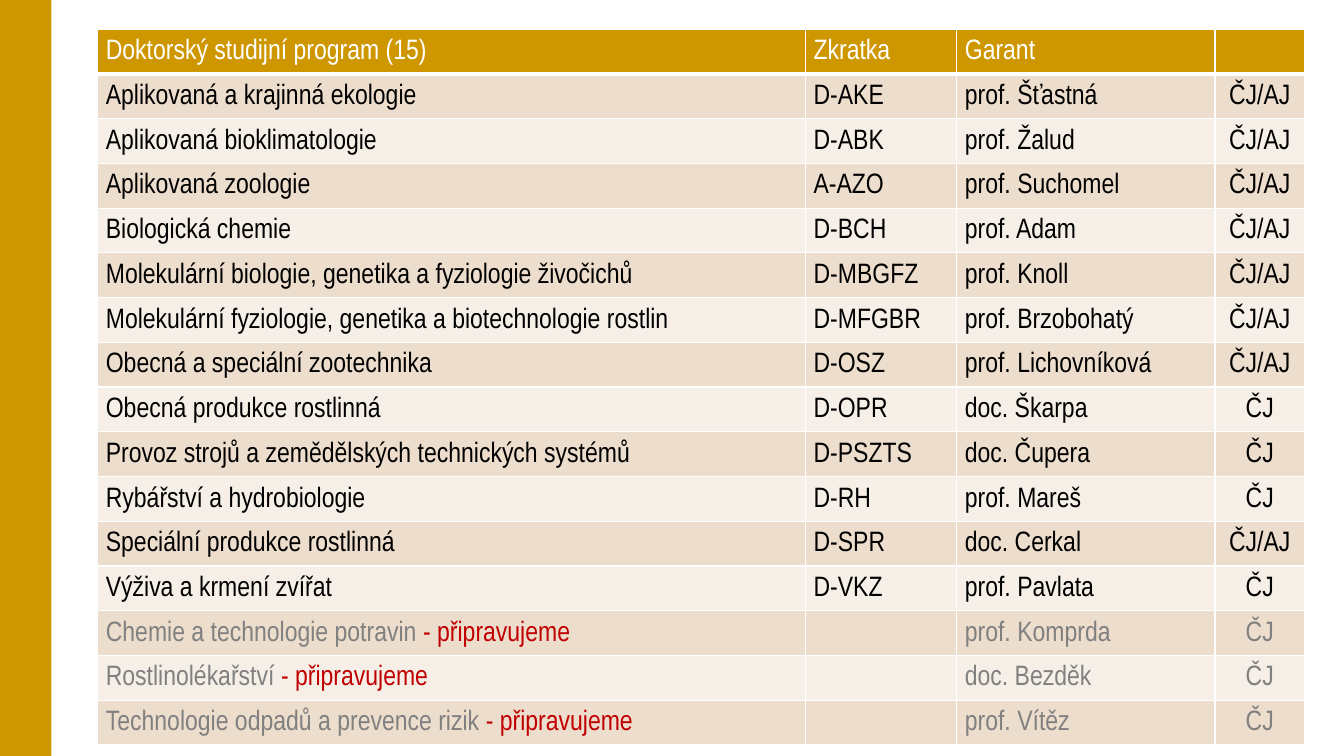
"""Build the slide listing the doctoral study programmes."""
from lxml.etree import SubElement as Sub
from pptx import Presentation
from pptx.dml.color import RGBColor as RGB
from pptx.enum.shapes import MSO_SHAPE as SHAPE
from pptx.enum.text import MSO_ANCHOR as ANCHOR, PP_ALIGN as ALIGN
from pptx.oxml.ns import qn
from pptx.util import Inches, Pt

HEADER = ("Doktorský studijní program (15)", "Zkratka", "Garant", "")
PROGRAMS = [
    ("Aplikovaná a krajinná ekologie", "D-AKE", "prof. Šťastná", "ČJ/AJ"),
    ("Aplikovaná bioklimatologie", "D-ABK", "prof. Žalud", "ČJ/AJ"),
    ("Aplikovaná zoologie", "A-AZO", "prof. Suchomel", "ČJ/AJ"),
    ("Biologická chemie", "D-BCH", "prof. Adam", "ČJ/AJ"),
    ("Molekulární biologie, genetika a fyziologie živočichů", "D-MBGFZ", "prof. Knoll", "ČJ/AJ"),
    ("Molekulární fyziologie, genetika a biotechnologie rostlin", "D-MFGBR", "prof. Brzobohatý", "ČJ/AJ"),
    ("Obecná a speciální zootechnika", "D-OSZ", "prof. Lichovníková", "ČJ/AJ"),
    ("Obecná produkce rostlinná", "D-OPR", "doc. Škarpa", "ČJ"),
    ("Provoz strojů a zemědělských technických systémů", "D-PSZTS", "doc. Čupera", "ČJ"),
    ("Rybářství a hydrobiologie", "D-RH", "prof. Mareš", "ČJ"),
    ("Speciální produkce rostlinná", "D-SPR", "doc. Cerkal", "ČJ/AJ"),
    ("Výživa a krmení zvířat", "D-VKZ", "prof. Pavlata", "ČJ"),
]
PLANNED = [
    ("Chemie a technologie potravin ", "", "prof. Komprda", "ČJ"),
    ("Rostlinolékařství ", "", "doc. Bezděk", "ČJ"),
    ("Technologie odpadů a prevence rizik ", "", "prof. Vítěz", "ČJ"),
]
PLANNED_NOTE = "- připravujeme"
COL_WIDTHS = (7.02, 1.5, 2.56, 0.89)
LEFT, TOP, HEIGHT = 0.97, 0.29, 7.1
THEME = {
    "gold": "CE9700", "bands": ("EDDDCC", "F6EFE7"), "rule": "FFFFFF",
    "header": "FFFFFF", "text": "000000", "planned": "808080", "note": "C00000",
    "font": {"name": "Arial Narrow", "size": Pt(20), "bold": False},
    "cell": {"vertical_anchor": ANCHOR.MIDDLE, "margin_left": Inches(0.08),
             "margin_right": Inches(0.08), "margin_top": 0, "margin_bottom": 0},
    "paragraph": {"line_spacing": 1.07, "space_after": Pt(8)},
}


def apply(obj, values):
    for name, value in values.items():
        setattr(obj, name, value)


def paint(fill, color):
    fill.solid()
    fill.fore_color.rgb = RGB.from_string(color)


def add_borders(cell, widths):
    tc_pr = cell._tc.get_or_add_tcPr()
    for side, width in widths.items():
        ln = Sub(tc_pr, qn(f"a:ln{side}"), w=str(Pt(width)))
        Sub(Sub(ln, qn("a:solidFill")), qn("a:srgbClr"), val=THEME["rule"])


def write_cell(cell, runs, align):
    p = cell.text_frame.paragraphs[0]
    apply(p, THEME["paragraph"] | {"alignment": align})
    apply(p.font, THEME["font"])
    for text, color in runs:
        if text:
            r = p.add_run()
            r.text = text
            apply(r.font, THEME["font"])
            r.font.color.rgb = RGB.from_string(THEME[color])


def add_programs(slide):
    rows = [(HEADER, "header")]
    rows += [(row, "text") for row in PROGRAMS]
    rows += [(row, "planned") for row in PLANNED]
    table = slide.shapes.add_table(
        len(rows), len(COL_WIDTHS), Inches(LEFT), Inches(TOP),
        Inches(sum(COL_WIDTHS)), Inches(HEIGHT)).table
    for col, width in zip(table.columns, COL_WIDTHS):
        col.width = Inches(width)
    for i, (row, kind) in enumerate(rows):
        table.rows[i].height = Inches(HEIGHT / len(rows))
        fill = THEME["bands"][(i - 1) % 2] if i else THEME["gold"]
        widths = {"L": 1, "R": 1, "T": 3 if i == 1 else 1, "B": 1 if i else 3}
        for j, text in enumerate(row):
            cell = table.cell(i, j)
            apply(cell, THEME["cell"])
            add_borders(cell, widths)
            paint(cell.fill, fill)
            runs = [(text, kind)]
            if kind == "planned" and j == 0:
                runs.append((PLANNED_NOTE, "note"))
            write_cell(cell, runs, ALIGN.CENTER if i and j == 3 else ALIGN.LEFT)


def main():
    prs = Presentation()
    apply(prs, {"slide_width": Inches(13.33), "slide_height": Inches(7.5)})
    slide = prs.slides.add_slide(prs.slide_layouts[6])
    sidebar = slide.shapes.add_shape(SHAPE.RECTANGLE, 0, 0, Inches(0.51), prs.slide_height)
    sidebar.shadow.inherit = False
    sidebar.line.fill.background()
    paint(sidebar.fill, THEME["gold"])
    add_programs(slide)
    prs.save("out.pptx")


if __name__ == "__main__":
    main()
